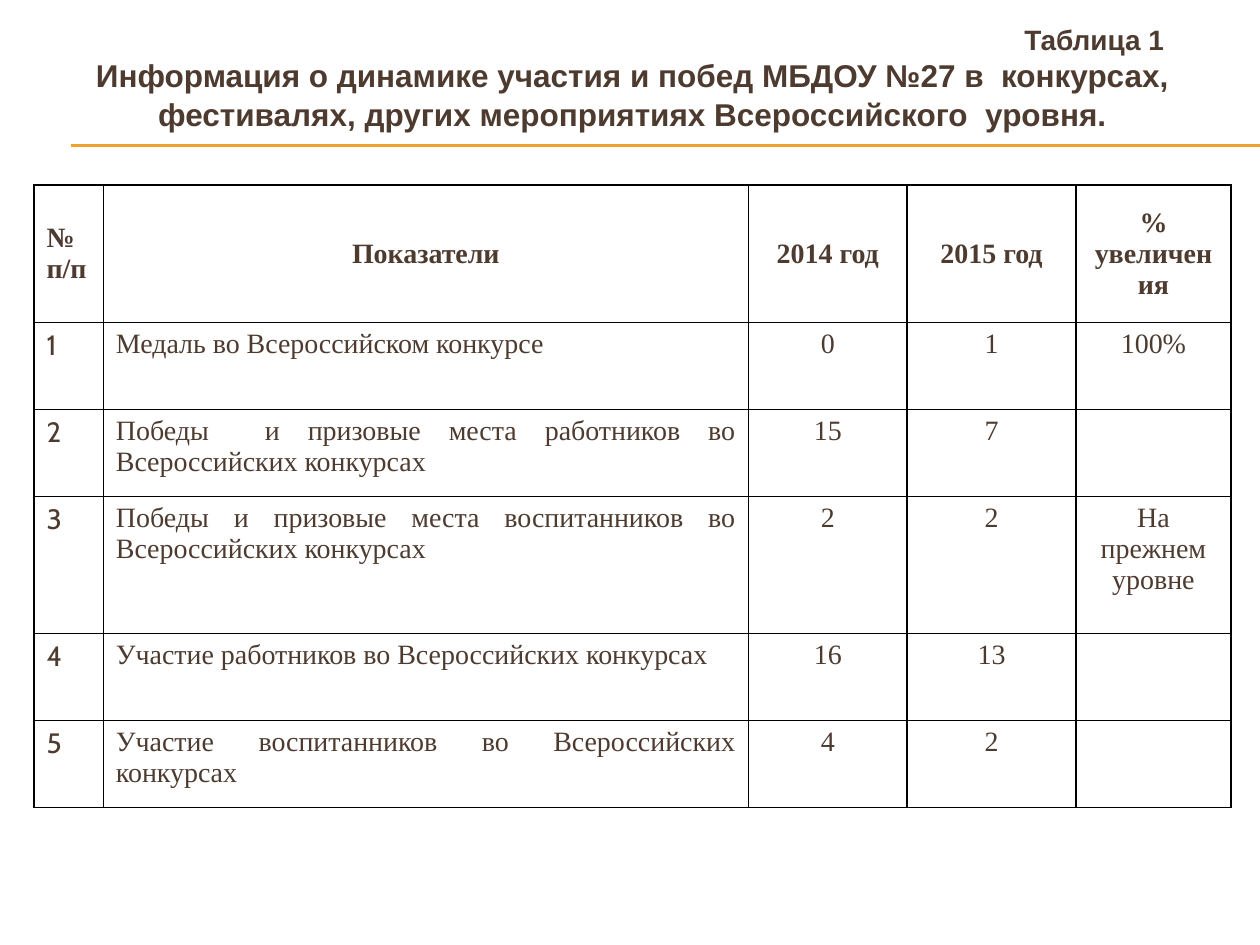
from dataclasses import dataclass

from lxml.etree import SubElement
from pptx import Presentation
from pptx.dml.color import RGBColor
from pptx.enum.shapes import MSO_CONNECTOR
from pptx.enum.text import MSO_ANCHOR, MSO_AUTO_SIZE, PP_ALIGN
from pptx.oxml.ns import qn
from pptx.util import Inches, Pt

BROWN, GOLD, BLACK, WHITE = "4E3B30", "F0A22E", "000000", "FFFFFF"
SERIF = "Times New Roman"


@dataclass(frozen=True)
class Column:
    heading: str
    width: float
    align: PP_ALIGN = PP_ALIGN.CENTER
    heading_align: PP_ALIGN = PP_ALIGN.CENTER
    font: str = SERIF


@dataclass(frozen=True)
class Row:
    height: float
    values: tuple[str, ...]


COLUMNS = (
    Column("№\nп/п", 0.55, PP_ALIGN.LEFT, PP_ALIGN.LEFT, "Cabin"),
    Column("Показатели", 5.12, PP_ALIGN.JUSTIFY),
    Column("2014 год", 1.26),
    Column("2015 год", 1.34),
    Column("% увеличения", 1.23),
)
HEADER_HEIGHT = 1.09
ROWS = (
    Row(0.69, ("Медаль во Всероссийском конкурсе", "0", "1", "100%")),
    Row(0.69, ("Победы  и призовые места работников во Всероссийских конкурсах", "15", "7", "")),
    Row(1.09, ("Победы и призовые места воспитанников во Всероссийских конкурсах",
               "2", "2", "На прежнем уровне")),
    Row(0.69, ("Участие работников во Всероссийских конкурсах", "16", "13", "")),
    Row(0.69, ("Участие воспитанников во Всероссийских конкурсах", "4", "2", "")),
)


def color(value: str) -> RGBColor:
    return RGBColor.from_string(value)


def add_span(para, text: str, size: float, font: str, bold: bool) -> None:
    span = para.add_run()
    span.text = text
    span.font.size = Pt(size)
    span.font.name = font
    span.font.bold = bold
    span.font.color.rgb = color(BROWN)


def add_rule(page, top: float) -> None:
    rule = page.shapes.add_connector(
        MSO_CONNECTOR.STRAIGHT, Inches(0.56), Inches(top), Inches(10), Inches(top))
    rule.line.color.rgb = color(GOLD)
    rule.line.width = Pt(0.75)
    SubElement(rule._element.spPr, qn("a:effectLst"))


def write_title(page) -> None:
    title = page.shapes.title
    title.left, title.top = Inches(0.27), Inches(0)
    title.width, title.height = Inches(9.5), Inches(1.12)
    frame = title.text_frame
    frame.word_wrap = True
    frame.auto_size = MSO_AUTO_SIZE.NONE
    frame.vertical_anchor = MSO_ANCHOR.MIDDLE

    label = frame.paragraphs[0]
    label.alignment = PP_ALIGN.LEFT
    label.line_spacing = Pt(27)
    label.space_before = Pt(0)
    tabs = SubElement(label._p.get_or_add_pPr(), qn("a:tabLst"))
    SubElement(tabs, qn("a:tab"), pos=str(Inches(7.76)), algn="l")
    add_span(label, "\tТаблица 1", 16, "Arial", True)

    heading = frame.add_paragraph()
    heading.alignment = PP_ALIGN.CENTER
    heading.line_spacing = Pt(22)
    heading.space_before = Pt(0)
    add_span(heading, "Информация о динамике участия и побед МБДОУ №27 в  конкурсах, "
                      "фестивалях, других мероприятиях Всероссийского  уровня.", 18, "Arial", True)


def add_borders(cell) -> None:
    properties = cell._tc.get_or_add_tcPr()
    for position, side in enumerate(("a:lnL", "a:lnR", "a:lnT", "a:lnB")):
        line = SubElement(properties, qn(side), w=str(Pt(1)))
        fill = SubElement(line, qn("a:solidFill"))
        SubElement(fill, qn("a:srgbClr"), val=BLACK)
        properties.insert(position, line)


def write_cell(cell, text: str, align: PP_ALIGN, font: str, bold: bool = False) -> None:
    cell.fill.solid()
    cell.fill.fore_color.rgb = color(WHITE)
    add_borders(cell)
    frame = cell.text_frame
    for index, line in enumerate(text.split("\n")):
        para = frame.add_paragraph() if index else frame.paragraphs[0]
        para.alignment = align
        if line:
            add_span(para, line, 16, font, bold)


def add_results_table(page) -> None:
    heights = [HEADER_HEIGHT, *(row.height for row in ROWS)]
    table = page.shapes.add_table(
        len(heights), len(COLUMNS), Inches(0.27), Inches(1.47),
        Inches(9.5), Inches(sum(heights))).table
    table.horz_banding = False
    for index, height in enumerate(heights):
        table.rows[index].height = Inches(height)
    for place, column in enumerate(COLUMNS):
        table.columns[place].width = Inches(column.width)
        header = table.cell(0, place)
        header.vertical_anchor = MSO_ANCHOR.MIDDLE
        write_cell(header, column.heading, column.heading_align, SERIF, bold=True)
        for number, row in enumerate(ROWS, start=1):
            text = (str(number), *row.values)[place]
            write_cell(table.cell(number, place), text, column.align, column.font)


def main() -> None:
    deck = Presentation()
    deck.slide_width, deck.slide_height = Inches(10), Inches(7.5)
    page = deck.slides.add_slide(deck.slide_layouts[5])
    for top in (1.15, 1.16):
        add_rule(page, top)
    write_title(page)
    add_results_table(page)
    deck.save("out.pptx")


if __name__ == "__main__":
    main()
